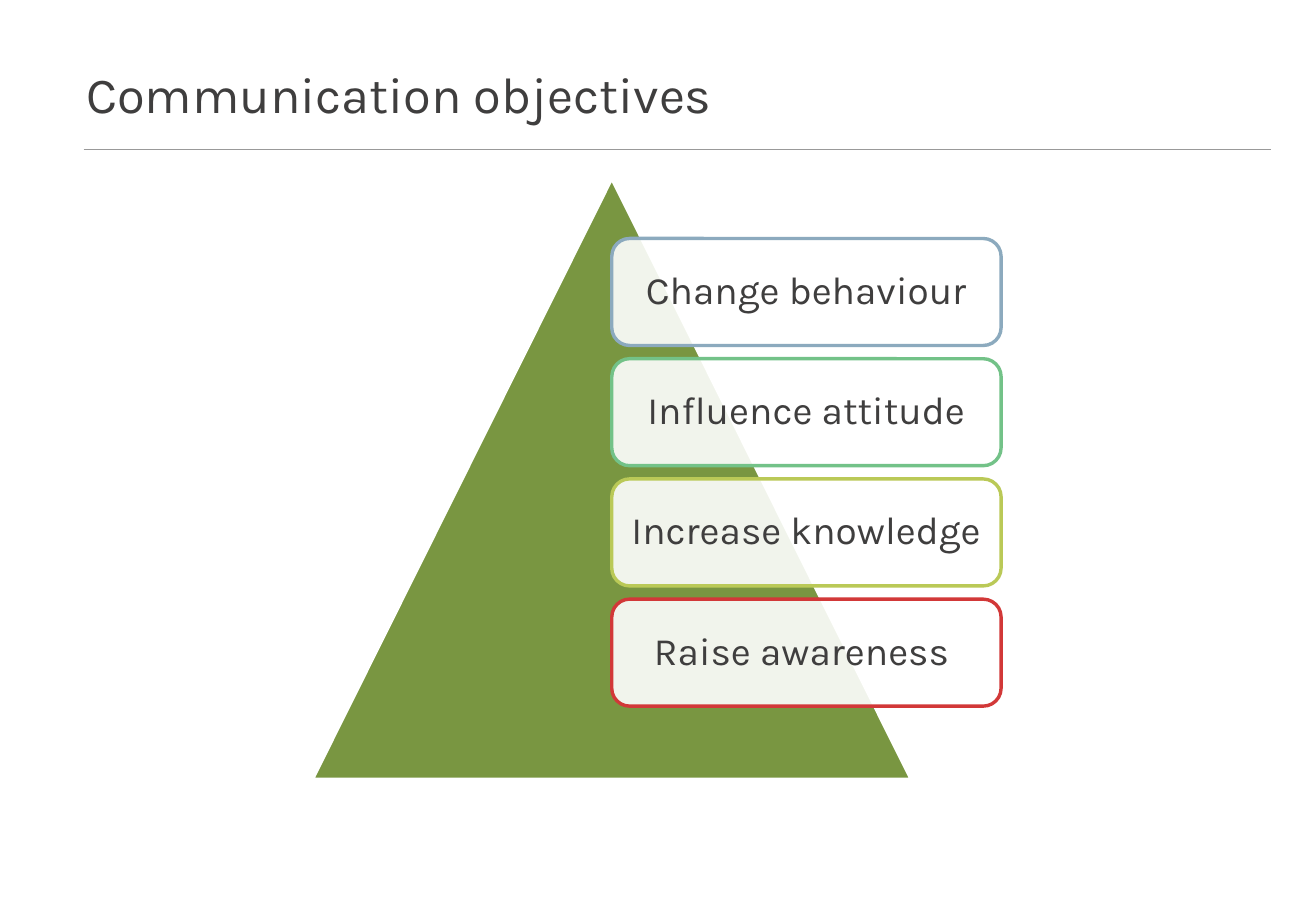
import pptx
import pptx.util
import pptx.dml.color
import pptx.enum.shapes
import pptx.enum.text
import pptx.oxml
import pptx.oxml.ns

Cm, Pt = pptx.util.Cm, pptx.util.Pt
SHAPE = pptx.enum.shapes.MSO_SHAPE
ALIGN = pptx.enum.text.PP_ALIGN
ANCHOR = pptx.enum.text.MSO_ANCHOR

HUES = {
    "text": "3F3E3E", "rule": "999999", "white": "FFFFFF",
    "peak": "799641", "blue": "8CAABE", "green": "73C288",
    "lime": "BAC957", "red": "D23838",
}
GOALS = [
    ("Change behaviour", "blue"),
    ("Influence attitude", "green"),
    ("Increase knowledge", "lime"),
    ("Raise awareness ", "red"),
]


def hue(name):
    return pptx.dml.color.RGBColor.from_string(HUES[name])


def assign(item, values):
    for key, value in values.items():
        setattr(item, key, value)


def write(shape, text, size, align, frame):
    body = shape.text_frame
    body.text = text
    assign(body, {"word_wrap": True,
                  "auto_size": pptx.enum.text.MSO_AUTO_SIZE.NONE, **frame})
    para = body.paragraphs[0]
    assign(para, {"alignment": align, "line_spacing": 0.9})
    assign(para.font, {"name": "Karla", "size": Pt(size), "bold": False})
    para.font.color.rgb = hue("text")


def draw(slide, kind, box, fill, line):
    shape = slide.shapes.add_shape(kind, *map(Cm, box))
    shape.shadow.inherit = False
    shape.fill.solid()
    shape.fill.fore_color.rgb = hue(fill)
    shape.line.color.rgb = hue(line)
    shape.line.width = Pt(2)
    return shape


def fade(shape, percent):
    color = shape.fill._xPr.find(".//" + pptx.oxml.ns.qn("a:srgbClr"))
    color.append(pptx.oxml.parse_xml(
        f'<a:alpha {pptx.oxml.ns.nsdecls("a")} val="{percent * 1000}"/>'))


# Title with the rule below it
def header(slide, box):
    left, top, width, height = box
    title = slide.shapes.title
    assign(title, {"left": Cm(left), "top": Cm(top),
                   "width": Cm(19.35), "height": Cm(height)})
    write(title, "Communication objectives", 30, ALIGN.LEFT,
          {"vertical_anchor": ANCHOR.BOTTOM})
    start, level = left + 0.2, top + height + 0.38
    rule = slide.shapes.add_connector(
        pptx.enum.shapes.MSO_CONNECTOR.STRAIGHT,
        Cm(start), Cm(level), Cm(left + width), Cm(level))
    rule.line.color.rgb = hue("rule")
    rule.line.width = Pt(0.5)
    rule._element.spPr.append(pptx.oxml.parse_xml(
        f'<a:effectLst {pptx.oxml.ns.nsdecls("a")}/>'))


# Triangle with a stack of goals from its centre line
def pyramid(slide, box):
    left, top, width, height = box
    draw(slide, SHAPE.ISOSCELES_TRIANGLE, box, "peak", "white")
    tall, step = height * 0.178, height * 0.2
    for row, (text, color) in enumerate(GOALS):
        place = (left + width / 2, top + height * 0.1 + row * step,
                 width * 0.65, tall)
        card = draw(slide, SHAPE.ROUNDED_RECTANGLE, place, "white", color)
        fade(card, 90)
        write(card, text, 23, ALIGN.CENTER,
              {"vertical_anchor": ANCHOR.MIDDLE,
               "margin_left": Cm(0.2), "margin_right": Cm(0.2)})


def main():
    deck = pptx.Presentation()
    assign(deck, {"slide_width": Cm(27.51), "slide_height": Cm(19.05)})
    slide = deck.slides.add_slide(deck.slide_layouts[5])
    header(slide, (1.55, 0.33, 25.02, 2.41))
    pyramid(slide, (6.53, 3.73, 12.52, 12.57))
    deck.save("out.pptx")


if __name__ == "__main__":
    main()
